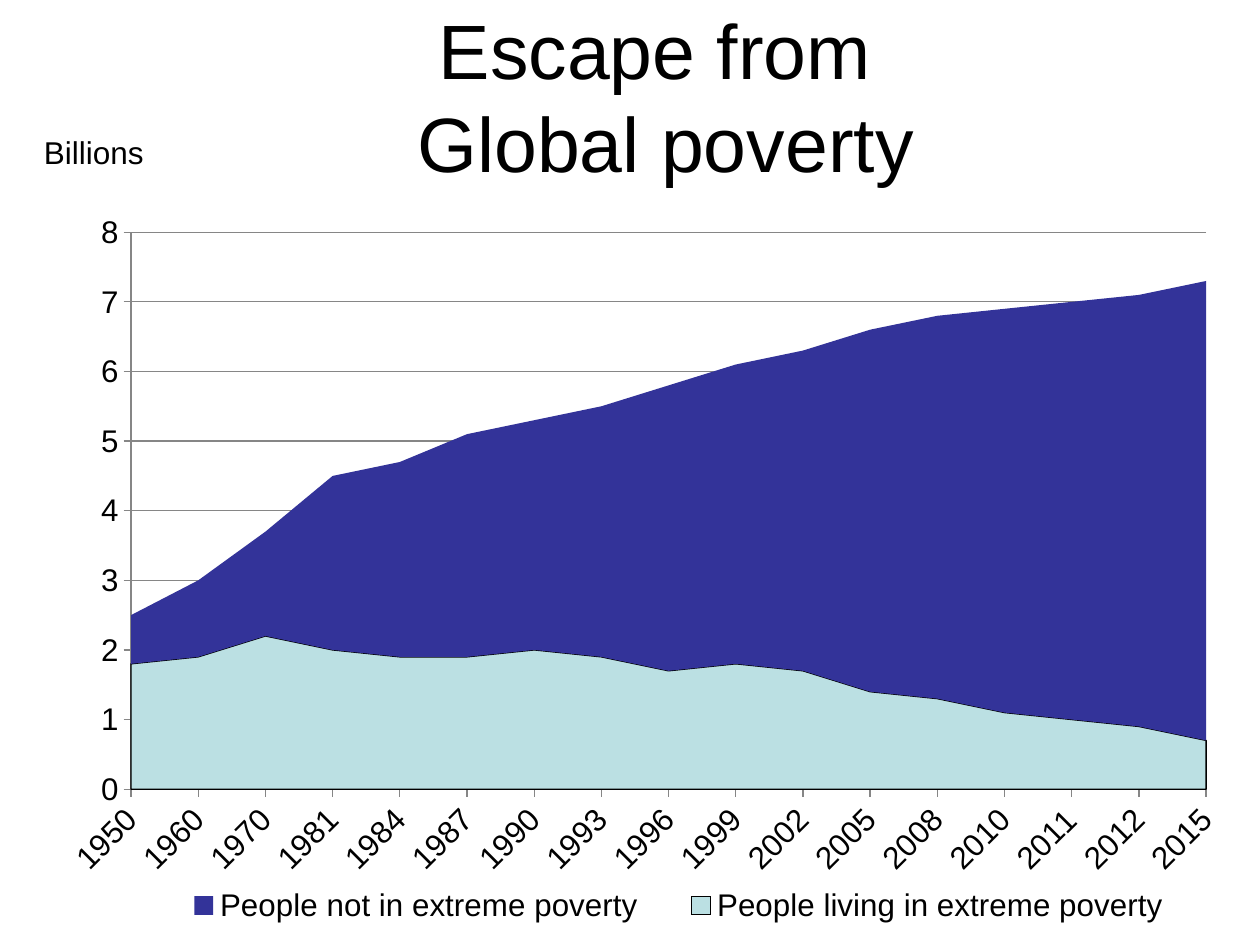
from dataclasses import dataclass

import pptx
import pptx.chart.data
import pptx.dml.color
import pptx.enum.chart
import pptx.enum.text
import pptx.oxml
import pptx.oxml.ns
import pptx.util

Pt = pptx.util.Pt
FONT = "Arial"
COLORS = {
    "text": "000000",
    "outline": "000000",
    "axis": "868686",
    "poor": "BBE0E3",
    "not_poor": "333399",
}
YEARS = ["1950", "1960", "1970", "1981", "1984", "1987", "1990", "1993", "1996",
         "1999", "2002", "2005", "2008", "2010", "2011", "2012", "2015"]


@dataclass
class Box:
    left: float
    top: float
    width: float
    height: float


@dataclass
class Label:
    text: str
    box: Box
    size: float
    align: pptx.enum.text.PP_ALIGN
    anchor: pptx.enum.text.MSO_ANCHOR


@dataclass
class Population:
    name: str
    billions: list[float]
    color: str
    outlined: bool


LABELS = [
    Label("Escape from\v Global poverty", Box(50.4, 12.24, 648, 84.24), 44,
          pptx.enum.text.PP_ALIGN.CENTER, pptx.enum.text.MSO_ANCHOR.MIDDLE),
    Label("Billions", Box(18, 72.72, 95.76, 28.8), 18,
          pptx.enum.text.PP_ALIGN.LEFT, pptx.enum.text.MSO_ANCHOR.TOP),
]
POPULATIONS = [
    Population("People living in extreme poverty",
               [1.8, 1.9, 2.2, 2, 1.9, 1.9, 2, 1.9, 1.7, 1.8, 1.7, 1.4, 1.3, 1.1, 1, 0.9, 0.7],
               "poor", True),
    Population("People not in extreme poverty",
               [0.7, 1.1, 1.5, 2.5, 2.8, 3.2, 3.3, 3.6, 4.1, 4.3, 4.6, 5.2, 5.5, 5.8, 6, 6.2, 6.6],
               "not_poor", False),
]
CHART_BOX = Box(23.76, 120.24, 700.56, 446.4)
# Fractions of the chart area
PLOT_LAYOUT = Box(0.073, 0.028, 0.877, 0.713)
LEGEND_LAYOUT = Box(0.09, 0.86, 0.86, 0.06)


def rgb(name: str) -> pptx.dml.color.RGBColor:
    return pptx.dml.color.RGBColor.from_string(COLORS[name])


def style_font(font, size: float) -> None:
    font.name = FONT
    font.size = Pt(size)
    font.color.rgb = rgb("text")


def style_line(line, color: str) -> None:
    line.color.rgb = rgb(color)
    line.width = Pt(0.75)


def points(box: Box) -> list[pptx.util.Length]:
    return [Pt(length) for length in (box.left, box.top, box.width, box.height)]


def add_label(slide, label: Label) -> None:
    frame = slide.shapes.add_textbox(*points(label.box)).text_frame
    frame.word_wrap = True
    frame.vertical_anchor = label.anchor
    paragraph = frame.paragraphs[0]
    paragraph.text = label.text
    paragraph.alignment = label.align
    style_font(paragraph.font, label.size)


def layout_xml(box: Box, inner: bool):
    """Build a manual chart layout; inner means the axes labels lie outside it."""
    target = '<c:layoutTarget val="inner"/>' if inner else ""
    return pptx.oxml.parse_xml(
        f'<c:layout {pptx.oxml.ns.nsdecls("c")}><c:manualLayout>{target}'
        '<c:xMode val="edge"/><c:yMode val="edge"/>'
        f'<c:x val="{box.left}"/><c:y val="{box.top}"/>'
        f'<c:w val="{box.width}"/><c:h val="{box.height}"/>'
        '</c:manualLayout></c:layout>')


def place_chart_parts(chart) -> None:
    plot_area = chart._chartSpace.xpath("c:chart/c:plotArea")[0]
    for layout in plot_area.xpath("c:layout"):
        plot_area.remove(layout)
    plot_area.insert(0, layout_xml(PLOT_LAYOUT, True))
    legend = chart._chartSpace.xpath("c:chart/c:legend")[0]
    for layout in legend.xpath("c:layout"):
        legend.remove(layout)
    legend.xpath("c:legendPos")[0].addnext(layout_xml(LEGEND_LAYOUT, False))


def add_poverty_chart(slide) -> None:
    chart_data = pptx.chart.data.CategoryChartData()
    chart_data.categories = YEARS
    for population in POPULATIONS:
        chart_data.add_series(population.name, population.billions)
    chart = slide.shapes.add_chart(
        pptx.enum.chart.XL_CHART_TYPE.AREA_STACKED, *points(CHART_BOX), chart_data).chart
    chart.has_title = False
    style_font(chart.font, 17.9)

    for series, population in zip(chart.plots[0].series, POPULATIONS):
        series.format.fill.solid()
        series.format.fill.fore_color.rgb = rgb(population.color)
        if population.outlined:
            style_line(series.format.line, "outline")
        else:
            series.format.line.fill.background()

    years, billions = chart.category_axis, chart.value_axis
    for axis in (years, billions):
        axis.major_tick_mark = pptx.enum.chart.XL_TICK_MARK.OUTSIDE
        axis.minor_tick_mark = pptx.enum.chart.XL_TICK_MARK.NONE
        style_line(axis.format.line, "axis")
        style_font(axis.tick_labels.font, 17.9)
    years.has_major_gridlines = False
    years._element.xpath("c:txPr/a:bodyPr")[0].set("rot", "-2700000")
    billions.minimum_scale, billions.maximum_scale, billions.major_unit = 0, 8, 1
    billions.tick_labels.number_format = "#,##0"
    billions.tick_labels.number_format_is_linked = False
    billions.has_major_gridlines = True
    style_line(billions.major_gridlines.format.line, "axis")
    for crossing in billions._element.xpath("c:crossBetween"):
        crossing.set("val", "midCat")

    chart.has_legend = True
    chart.legend.position = pptx.enum.chart.XL_LEGEND_POSITION.RIGHT
    chart.legend.include_in_layout = False
    style_font(chart.legend.font, 17.9)
    place_chart_parts(chart)


def main() -> None:
    presentation = pptx.Presentation()
    presentation.slide_width, presentation.slide_height = Pt(720), Pt(540)
    slide = presentation.slides.add_slide(presentation.slide_layouts[6])
    add_poverty_chart(slide)
    for label in LABELS:
        add_label(slide, label)
    presentation.save("out.pptx")


if __name__ == "__main__":
    main()
